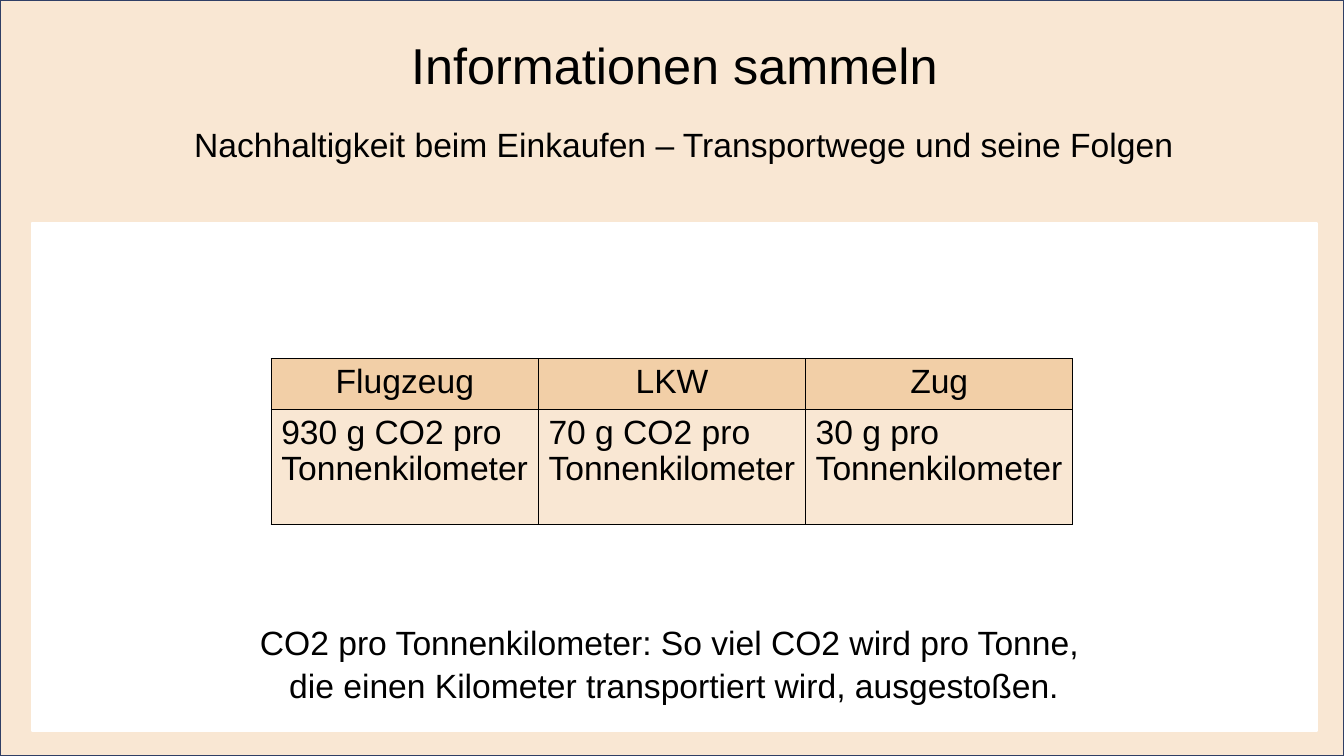
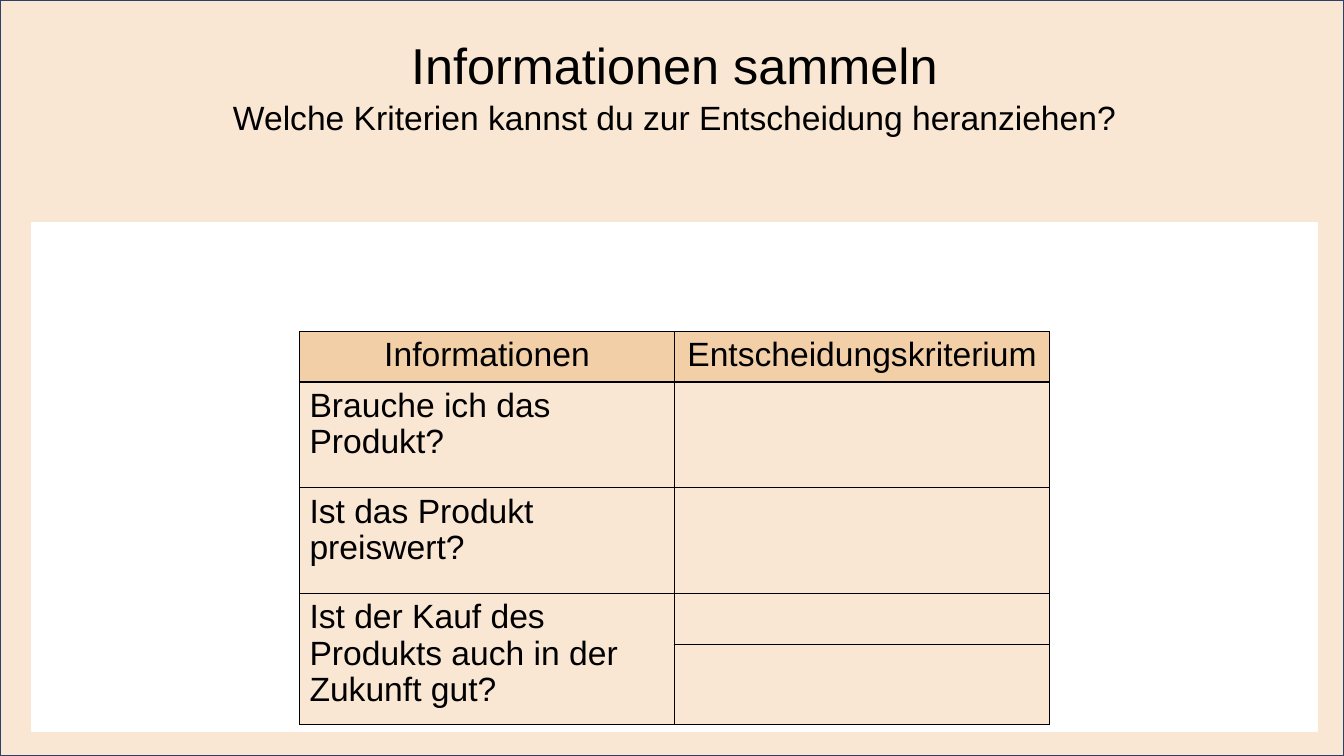
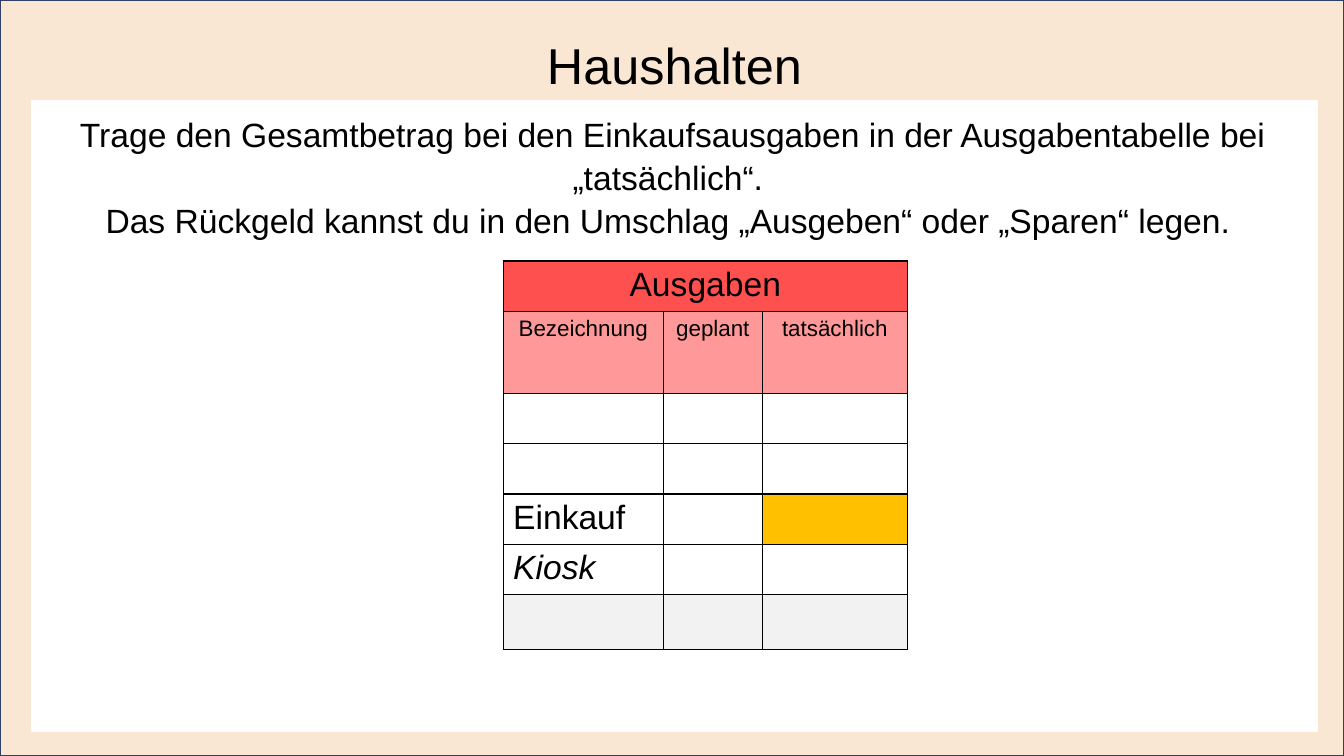
"""Build three German lesson slides on shopping and budgeting."""
import lxml.etree
import pptx
import pptx.dml.color
import pptx.enum.shapes
import pptx.enum.text
import pptx.oxml.ns
import pptx.util

Inches = pptx.util.Inches
Pt = pptx.util.Pt
qn = pptx.oxml.ns.qn
MID = pptx.enum.text.PP_ALIGN.CENTER
LEFT = pptx.enum.text.PP_ALIGN.LEFT
FONT = "Arial"
HEAD, BODY, SMALL = 36, 24, 16
WIDE, HIGH = 13.33, 7.5
EDGE, INNER, BASE = 0.32, 12.74, 7.25
COLORS = {
    "ink": "000000", "cream": "F9E7D3", "navy": "303F65", "white": "FFFFFF",
    "sand": "F2CFA7", "red": "FF5050", "pink": "FF9999", "gold": "FFC000",
    "gray": "F2F2F2",
}


def color(name):
    return pptx.dml.color.RGBColor.from_string(COLORS[name])


def write(para, text, size, align=MID, space=1.06, slant=False):
    para.alignment = align
    para.line_spacing = space
    run = para.add_run()
    run.text = text
    font = run.font
    font.name = FONT
    font.size = Pt(size)
    font.italic = slant
    font.color.rgb = color("ink")


def panel(slide, left, top, width, height, fill, line):
    kind = pptx.enum.shapes.MSO_SHAPE.RECTANGLE
    shape = slide.shapes.add_shape(
        kind, Inches(left), Inches(top), Inches(width), Inches(height))
    shape.shadow.inherit = False
    shape.fill.solid()
    shape.fill.fore_color.rgb = color(fill)
    shape.line.color.rgb = color(line)
    shape.line.width = Pt(1.25)


def label(slide, left, top, width, height, lines):
    box = slide.shapes.add_textbox(
        Inches(left), Inches(top), Inches(width), Inches(height))
    frame = box.text_frame
    frame.word_wrap = True
    for num, (text, size) in enumerate(lines):
        para = frame.add_paragraph() if num else frame.paragraphs[0]
        write(para, text, size)


def frame_page(deck, top, title, sub=None):
    slide = deck.slides.add_slide(deck.slide_layouts[6])
    panel(slide, 0, 0, WIDE, HIGH, "cream", "navy")
    panel(slide, EDGE, top, INNER, BASE - top, "white", "white")
    lines = [(title, HEAD)] + ([(sub, BODY)] if sub else [])
    label(slide, EDGE, 0.25, INNER, 1.11 if sub else 0.71, lines)
    return slide


def border(cell):
    props = cell._tc.get_or_add_tcPr()
    for side in ("lnL", "lnR", "lnT", "lnB"):
        line = lxml.etree.SubElement(props, qn("a:" + side), w=str(Pt(1)))
        fill = lxml.etree.SubElement(line, qn("a:solidFill"))
        lxml.etree.SubElement(fill, qn("a:srgbClr"), val=COLORS["ink"])


def paint(cell, fill):
    if fill:
        cell.fill.solid()
        cell.fill.fore_color.rgb = color(fill)
    else:
        cell.fill.background()


def grid(slide, left, top, cols, rows, fills):
    shape = slide.shapes.add_table(
        len(rows), len(cols), Inches(left), Inches(top),
        Inches(sum(cols)), Inches(sum(rows)))
    table = shape.table
    table.first_row = table.horz_banding = False
    for col, width in zip(table.columns, cols):
        col.width = Inches(width)
    for row, height, fill in zip(table.rows, rows, fills):
        row.height = Inches(height)
        for cell in row.cells:
            cell.margin_top = Inches(0.06)
            border(cell)
            paint(cell, fill)
    return table


def fill_row(table, row, texts, size=BODY, align=LEFT, slant=False):
    for col, text in enumerate(texts):
        para = table.cell(row, col).text_frame.paragraphs[0]
        write(para, text, size, align, 0.97, slant)


def freight(deck):
    slide = frame_page(deck, 2.21, "Informationen sammeln")
    label(slide, EDGE, 1.16, 12.92, 0.5, [
        ("Nachhaltigkeit beim Einkaufen – Transportwege und seine Folgen", BODY)])
    table = grid(slide, 2.69, 3.56, [2.65] * 3, [0.5, 1.14], ["sand", "cream"])
    fill_row(table, 0, ["Flugzeug", "LKW", "Zug"], align=MID)
    fill_row(table, 1, ["930 g CO2 pro Tonnenkilometer",
                        "70 g CO2 pro Tonnenkilometer",
                        "30 g pro Tonnenkilometer"])
    label(slide, 2.29, 6.1, 8.79, 0.91, [
        ("CO2 pro Tonnenkilometer: So viel CO2 wird pro Tonne, ", BODY),
        ("die einen Kilometer transportiert wird, ausgestoßen.", BODY)])


def choice(deck):
    slide = frame_page(
        deck, 2.21, "Informationen sammeln",
        "Welche Kriterien kannst du zur Entscheidung heranziehen?")
    table = grid(slide, 2.97, 3.29, [3.72] * 2, [0.5, 1.05, 1.05, 0.5, 0.8],
                 ["sand"] + ["cream"] * 4)
    table.cell(3, 0).merge(table.cell(4, 0))
    fill_row(table, 0, ["Informationen", "Entscheidungskriterium"], align=MID)
    asks = ["Brauche ich das Produkt?", "Ist das Produkt preiswert?",
            "Ist der Kauf des Produkts auch in der Zukunft gut?"]
    for row, ask in enumerate(asks, 1):
        fill_row(table, row, [ask])


def budget(deck):
    slide = frame_page(deck, 1, "Haushalten")
    label(slide, 0.36, 1.06, 12.62, 0.91, [
        ("Trage den Gesamtbetrag bei den Einkaufsausgaben in der "
         "Ausgabentabelle bei „tatsächlich“. ", BODY),
        ("Das Rückgeld kannst du in den Umschlag „Ausgeben“ oder "
         "„Sparen“ legen. ", BODY)])
    table = grid(slide, 4.99, 2.59, [1.59, 0.98, 1.44],
                 [0.5, 0.81] + [0.5] * 4 + [0.54],
                 ["red", "pink"] + [None] * 4 + ["gray"])
    table.cell(0, 0).merge(table.cell(0, 2))
    paint(table.cell(4, 2), "gold")
    fill_row(table, 0, ["Ausgaben"], align=MID)
    fill_row(table, 1, ["Bezeichnung", "geplant", "tatsächlich"], SMALL, MID)
    fill_row(table, 4, ["Einkauf"])
    fill_row(table, 5, ["Kiosk"], slant=True)


def main():
    deck = pptx.Presentation()
    deck.slide_width = Inches(WIDE)
    deck.slide_height = Inches(HIGH)
    freight(deck)
    choice(deck)
    budget(deck)
    deck.save("out.pptx")


if __name__ == "__main__":
    main()
